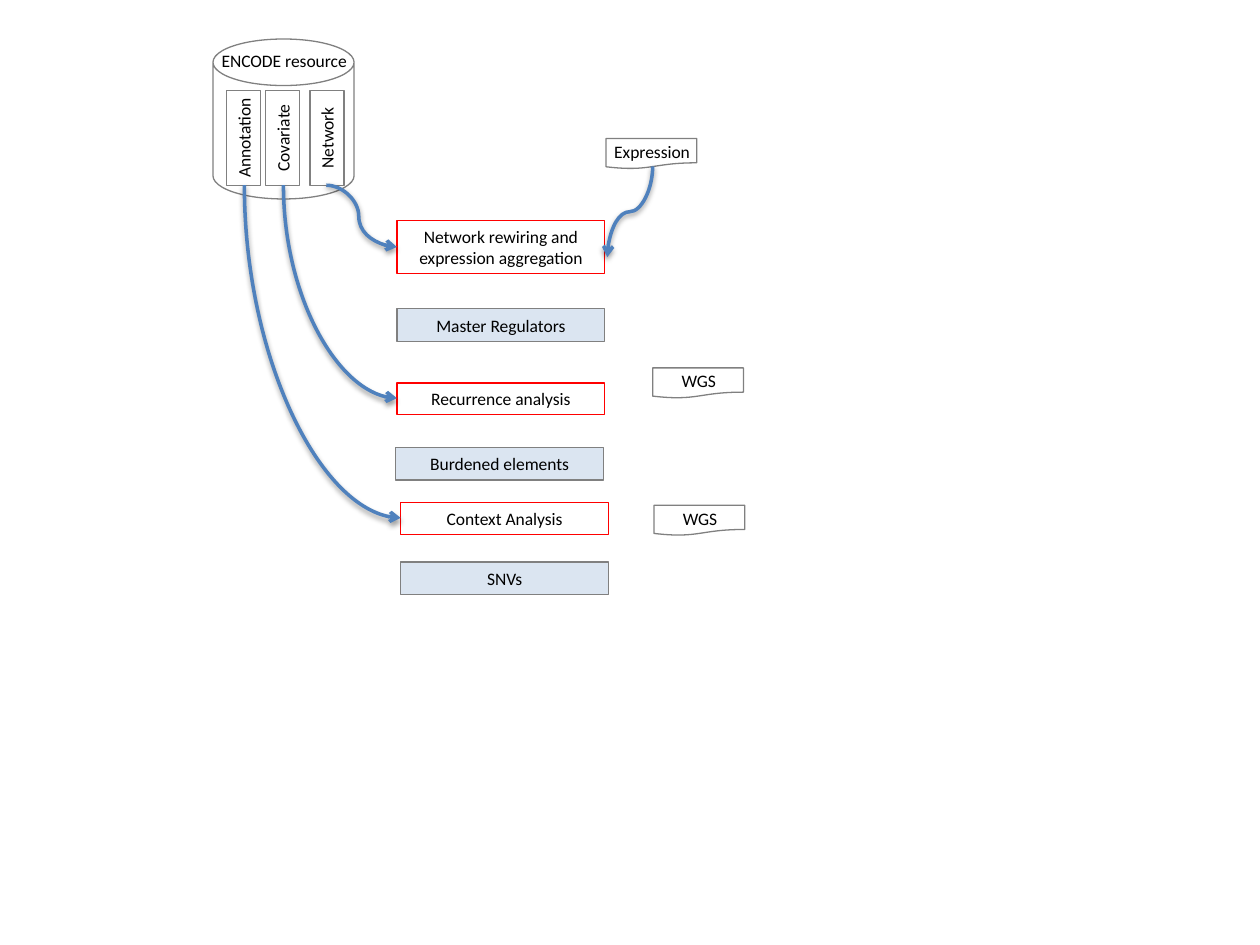
from lxml.etree import SubElement
from pptx import Presentation
from pptx.dml.color import RGBColor
from pptx.enum.shapes import MSO_CONNECTOR, MSO_SHAPE
from pptx.enum.text import MSO_ANCHOR, MSO_AUTO_SIZE, PP_ALIGN
from pptx.oxml.ns import qn
from pptx.util import Inches, Pt

GREY, RED, BLUE, PALE, BLACK = "808080", "FF0000", "4F81BD", "B9CDE5", "000000"
FONT = {"name": "Calibri", "size": Pt(10)}
MID = {"vertical_anchor": MSO_ANCHOR.MIDDLE, "word_wrap": True}
LOOSE = {"vertical_anchor": MSO_ANCHOR.TOP, "word_wrap": False}
GROW = {"word_wrap": True, "auto_size": MSO_AUTO_SIZE.SHAPE_TO_FIT_TEXT}
TITLE = {**GROW, "word_wrap": False}

STEPS = [
    ("Network rewiring and expression aggregation", 3.15, 1.75, 0.42, RED),
    ("Master Regulators", 3.15, 2.45, 0.26, GREY),
    ("Recurrence analysis", 3.15, 3.04, 0.25, RED),
    ("Burdened elements", 3.14, 3.55, 0.26, GREY),
    ("Context Analysis", 3.18, 3.99, 0.25, RED),
    ("SNVs", 3.18, 4.46, 0.26, GREY),
]
STORES = [("Network", 2.22), ("Annotation", 1.56), ("Covariate", 1.87)]
INPUTS = [("Expression", 4.81, 1.1), ("WGS", 5.18, 2.92), ("WGS", 5.19, 4.01)]
WIRES = [
    ((1.94, 1.47), (3.18, 4.11), 2, 270, None),
    ((2.59, 1.47), (3.15, 1.96), 3, 0, 46000),
    ((2.25, 1.47), (3.15, 3.16), 2, 270, None),
    ((5.18, 1.32), (4.82, 2.04), 3, 90, None),
]


def color(code):
    """Turn a hex string into a colour."""
    return RGBColor.from_string(code)


def assign(item, values):
    """Set each named value on an item."""
    for name, value in values.items():
        setattr(item, name, value)


def child(node, tag, **attrs):
    """Add a drawing element with attributes."""
    return SubElement(node, qn("a:" + tag), {k: str(v) for k, v in attrs.items()})


def write(shape, text, frame, align=PP_ALIGN.CENTER):
    """Put black text into a shape."""
    assign(shape.text_frame, frame)
    para = shape.text_frame.paragraphs[0]
    para.alignment = align
    run = para.add_run()
    run.text = text
    assign(run.font, FONT)
    run.font.color.rgb = color(BLACK)


def draw(home, kind, box, edge, fill=None):
    """Add an outlined shape, filled half clear if asked."""
    shape = home.add_shape(kind, *map(Inches, box))
    shape.shadow.inherit = False
    shape.line.color.rgb = color(edge)
    shape.line.width = Pt(0.75)
    if fill:
        shape.fill.solid()
        shape.fill.fore_color.rgb = color(fill)
        child(shape.fill._xPr.find(".//" + qn("a:srgbClr")), "alpha", val=50000)
    else:
        shape.fill.background()
    return shape


def label(home, text, box, frame, align=PP_ALIGN.CENTER):
    """Add a text box."""
    write(home.add_textbox(*map(Inches, box)), text, frame, align)


def connect(home, start, end, bends, turn, bend):
    """Add a curved arrow, turned about its centre."""
    (x1, y1), (x2, y2) = start, end
    wide, high = abs(x2 - x1), abs(y2 - y1)
    if turn:
        wide, high = high, wide
    left, top = (x1 + x2 - wide) / 2, (y1 + y2 - high) / 2
    ends = left, top, left + wide, top + high
    wire = home.add_connector(MSO_CONNECTOR.CURVE, *map(Inches, ends))
    wire.line.color.rgb = color(BLUE)
    wire.line.width = Pt(2)
    props = wire._element.spPr
    frame, geom = props.find(qn("a:xfrm")), props.find(qn("a:prstGeom"))
    frame.set("rot", str(turn * 60000))
    if turn == 270:
        frame.set("flipH", "1")
    geom.set("prst", f"curvedConnector{bends}")
    if bend:
        child(geom.find(qn("a:avLst")), "gd", name="adj1", fmla=f"val {bend}")
    child(props.find(qn("a:ln")), "tailEnd", type="arrow")
    shade = child(child(props, "effectLst"), "outerShdw", blurRad=Pt(3.1),
                  dist=Pt(1.6), dir=90 * 60000, rotWithShape=0)
    child(child(shade, "srgbClr", val=BLACK), "alpha", val=38000)


def feed(home, text, left, top):
    """Add a grouped document symbol with its name."""
    group = home.add_group_shape().shapes
    draw(group, MSO_SHAPE.FLOWCHART_DOCUMENT, (left, top, 0.72, 0.24), GREY)
    label(group, text, (left - 0.06, top - 0.03, 0.85, 0.27), GROW)


def main():
    """Build the slide and save it."""
    deck = Presentation()
    assign(deck, {"slide_width": Inches(10), "slide_height": Inches(7.5)})
    home = deck.slides.add_slide(deck.slide_layouts[6]).shapes
    can = draw(home, MSO_SHAPE.CAN, (1.69, 0.31, 1.12, 1.27), GREY)
    can.adjustments[0] = 0.33
    for text, left, top, high, edge in STEPS:
        fill = PALE if edge == GREY else None
        step = draw(home, MSO_SHAPE.RECTANGLE, (left, top, 1.65, high), edge, fill)
        write(step, text, MID)
    for text, left in STORES:
        store = draw(home, MSO_SHAPE.RECTANGLE, (left, 0.96, 0.75, 0.27), GREY)
        store.rotation = 270
        write(store, text, LOOSE)
    label(home, "ENCODE resource", (1.66, 0.35, 1.21, 0.27), TITLE, PP_ALIGN.LEFT)
    for item in INPUTS:
        feed(home, *item)
    for wire in WIRES:
        connect(home, *wire)
    deck.save("out.pptx")


if __name__ == "__main__":
    main()
